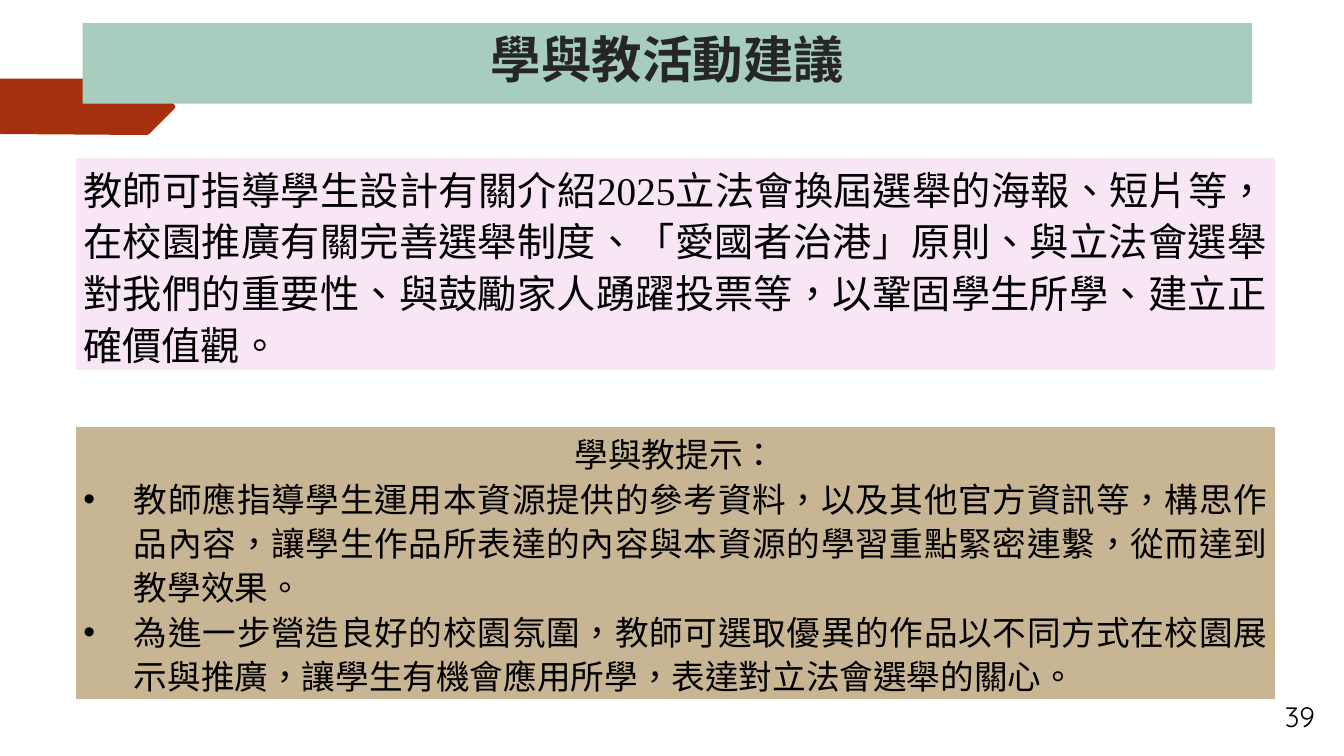
from lxml import etree
from pptx import Presentation
from pptx import util as u
from pptx.dml.color import RGBColor
from pptx.enum import shapes, text
from pptx.oxml.ns import qn

CELL = u.Inches(0.01)
COLUMNS, ROWS = 1333, 750
RUST = RGBColor(0xA5, 0x30, 0x10)
MINT = RGBColor(0xA6, 0xCD, 0xBD)
PINK = RGBColor(0xF8, 0xE6, 0xF6)
TAN = RGBColor(0xC8, 0xB5, 0x94)
WHITE = RGBColor(0xFF, 0xFF, 0xFF)
CHARCOAL = RGBColor(0x26, 0x26, 0x26)
BLACK = RGBColor(0x00, 0x00, 0x00)
CHINESE = "Noto Sans CJK SC"


def add_panel(column, row, columns, rows, fill):
    shape = slide.shapes.add_shape(
        shapes.MSO_SHAPE.RECTANGLE, column * CELL, row * CELL, columns * CELL, rows * CELL)
    shape.shadow.inherit = False
    shape.fill.solid()
    shape.fill.fore_color.rgb = fill
    shape.line.fill.background()
    shape.text_frame.word_wrap = True
    shape.text_frame.vertical_anchor = text.MSO_ANCHOR.TOP
    return shape


def format_runs(paragraph, size, color=BLACK, font=CHINESE, bold=False):
    paragraph._p.get_or_add_pPr().set("hangingPunct", "0")
    for run in paragraph.runs:
        run.font.size = u.Pt(size)
        run.font.bold = bold
        run.font.color.rgb = color
        run.font.name = "Times New Roman" if run.text == "2025" else font
        run.font._element.set("lang", "zh-TW")
        east_asian = etree.SubElement(run.font._element, qn("a:ea"))
        east_asian.set("typeface", CHINESE)


presentation = Presentation()
presentation.slide_width = COLUMNS * CELL
presentation.slide_height = ROWS * CELL
slide = presentation.slides.add_slide(presentation.slide_layouts[6])

builder = slide.shapes.build_freeform(-1, 78, scale=CELL)
builder.add_line_segments(
    [(146, 78), (148, 79), (173, 104), (174, 106), (173, 108), (148, 133), (146, 134), (-1, 133)])
ribbon = builder.convert_to_shape()
ribbon.shadow.inherit = False
ribbon.fill.solid()
ribbon.fill.fore_color.rgb = RUST
ribbon.line.fill.background()

title = add_panel(82, 23, 1160, 80, MINT)
title.text_frame.text = "學與教活動建議"
heading = title.text_frame.paragraphs[0]
heading.alignment = text.PP_ALIGN.CENTER
format_runs(heading, 36, CHARCOAL, "Calibri", True)

activity = add_panel(73, 155, 1194, 214, PINK)
activity_paragraph = activity.text_frame.paragraphs[0]
for words in (
    "教師可指導學生設計有關介紹",
    "2025",
    "立法會換屆選舉的海報、短片等，在校園推廣有關完善選舉制度、「愛國者治港」原則、與立法會選舉對我們的重要性、"
    "與鼓勵家人踴躍投票等，以鞏固學生所學、建立正確價值觀。",
):
    activity_paragraph.add_run().text = words

tips = add_panel(73, 422, 1194, 274, TAN)
tips.text_frame.text = "\n".join([
    "學與教提示：",
    "教師應指導學生運用本資源提供的參考資料，以及其他官方資訊等，構思作品內容，"
    "讓學生作品所表達的內容與本資源的學習重點緊密連繫，從而達到教學效果。",
    "為進一步營造良好的校園氛圍，教師可選取優異的作品以不同方式在校園展示與推廣，"
    "讓學生有機會應用所學，表達對立法會選舉的關心。",
])
for paragraph in tips.text_frame.paragraphs[1:]:
    properties = paragraph._p.get_or_add_pPr()
    properties.set("marL", str(50 * CELL))
    properties.set("indent", str(-50 * CELL))
    etree.SubElement(properties, qn("a:buFont")).set("typeface", "Arial")
    etree.SubElement(properties, qn("a:buChar")).set("char", "•")

for panel, size in ((activity, 28), (tips, 24)):
    panel.line.color.rgb = WHITE
    panel.line.width = u.Pt(3)
    panel.text_frame.auto_size = text.MSO_AUTO_SIZE.SHAPE_TO_FIT_TEXT
    for paragraph in panel.text_frame.paragraphs:
        paragraph.alignment = text.PP_ALIGN.JUSTIFY
        paragraph.line_spacing = 1.1
        format_runs(paragraph, size)
tips.text_frame.paragraphs[0].alignment = text.PP_ALIGN.CENTER

page_number = slide.shapes.add_textbox(1229 * CELL, 691 * CELL, 85 * CELL, 40 * CELL)
page_number.text_frame.word_wrap = True
page_number.text_frame.vertical_anchor = text.MSO_ANCHOR.MIDDLE
page_number.text_frame.text = "39"
number = page_number.text_frame.paragraphs[0]
number.alignment = text.PP_ALIGN.RIGHT
format_runs(number, 20, font="Quicksand")

presentation.save("out.pptx")
